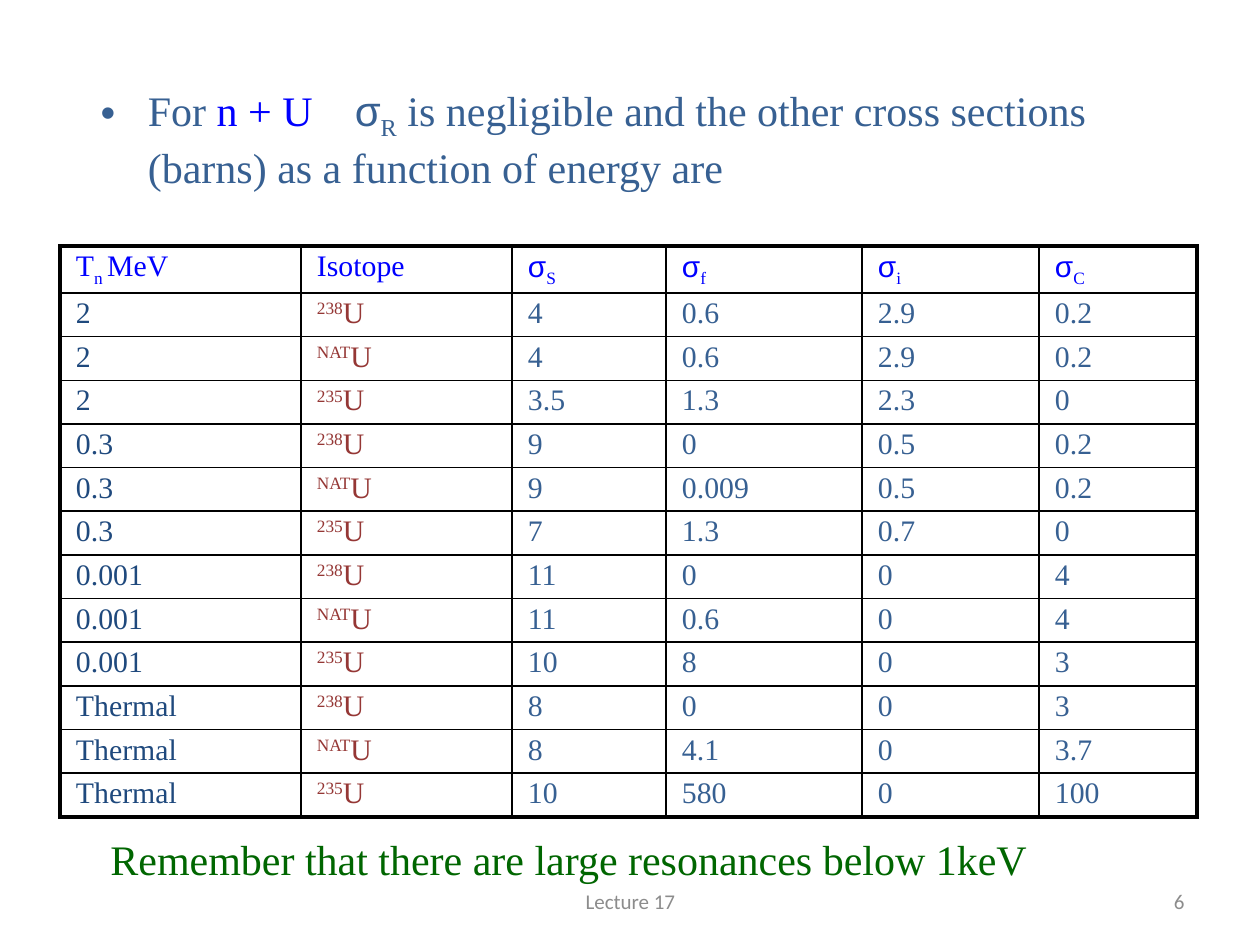
from dataclasses import dataclass
from itertools import product

from lxml import etree
from pptx import Presentation
from pptx.dml.color import RGBColor
from pptx.enum.text import MSO_ANCHOR, PP_ALIGN
from pptx.oxml.ns import qn
from pptx.util import Emu, Pt

LEFT, CENTER, RIGHT = PP_ALIGN.LEFT, PP_ALIGN.CENTER, PP_ALIGN.RIGHT
TOP, MIDDLE = MSO_ANCHOR.TOP, MSO_ANCHOR.MIDDLE
EMU_PER_PX = 914400 / 126


@dataclass(frozen=True)
class Theme:
    serif: str = "Times New Roman"
    greek: str = "Arial"
    sans: str = "Calibri"
    body: str = "376092"
    accent: str = "0000FF"
    energy: str = "1F497D"
    isotope: str = "953735"
    reminder: str = "006600"
    muted: str = "8C8C8C"
    paper: str = "FFFFFF"
    rule: str = "000000"
    statement_size: int = 24
    table_size: int = 17
    footer_size: int = 12
    subscript: int = -25
    superscript: int = 30
    outer_rule: float = 2.25
    inner_rule: float = 1


THEME = Theme()

COLUMN_WIDTHS = [241, 211, 154, 196, 177, 158]
HEADER_HEIGHT = 47
ENERGIES = ["2", "0.3", "0.001", "Thermal"]
ISOTOPES = ["238", "NAT", "235"]
CROSS_SECTIONS = [
    ["4", "0.6", "2.9", "0.2"],
    ["4", "0.6", "2.9", "0.2"],
    ["3.5", "1.3", "2.3", "0"],
    ["9", "0", "0.5", "0.2"],
    ["9", "0.009", "0.5", "0.2"],
    ["7", "1.3", "0.7", "0"],
    ["11", "0", "0", "4"],
    ["11", "0.6", "0", "4"],
    ["10", "8", "0", "3"],
    ["8", "0", "0", "3"],
    ["8", "4.1", "0", "3.7"],
    ["10", "580", "0", "100"],
]


def px(length):
    return Emu(round(length * EMU_PER_PX))


def write(paragraph, text, *, size, color, font=THEME.serif, baseline=0, tracking=0):
    run = paragraph.add_run()
    run.text = text
    run.font.size = Pt(size)
    run.font.name = font
    run.font.color.rgb = RGBColor.from_string(color)
    if baseline:
        run.font._element.set("baseline", str(baseline * 1000))
    if tracking:
        run.font._element.set("spc", str(tracking * 100))


def write_sigma(paragraph, index, *, size, color):
    write(paragraph, "σ", size=size, color=color, font=THEME.greek)
    write(paragraph, index, size=size, color=color, baseline=THEME.subscript)


def place_statement(slide, box):
    statement = slide.placeholders[1]
    statement.left, statement.top, statement.width, statement.height = map(px, box)
    statement.fill.solid()
    statement.fill.fore_color.rgb = RGBColor.from_string(THEME.paper)
    paragraph = statement.text_frame.paragraphs[0]
    size = THEME.statement_size
    write(paragraph, "For ", size=size, color=THEME.body)
    write(paragraph, "n + U", size=size, color=THEME.accent)
    write(paragraph, " ", size=size, color=THEME.accent, tracking=18)
    write_sigma(paragraph, "R", size=size, color=THEME.body)
    write(paragraph, " is negligible and the other cross sections (barns) as a function of energy are",
          size=size, color=THEME.body)


def rule_cell(cell, widths):
    properties = cell._tc.get_or_add_tcPr()
    for position, (side, width) in enumerate(widths.items()):
        line = etree.Element(qn(f"a:ln{side}"), w=str(Pt(width)))
        fill = etree.SubElement(line, qn("a:solidFill"))
        etree.SubElement(fill, qn("a:srgbClr"), val=THEME.rule)
        properties.insert(position, line)


def fill_header(paragraph, column):
    style = {"size": THEME.table_size, "color": THEME.accent}
    if column == 0:
        write(paragraph, "T", **style)
        write(paragraph, "n ", baseline=THEME.subscript, **style)
        write(paragraph, "MeV", **style)
    elif column == 1:
        write(paragraph, "Isotope", **style)
    else:
        write_sigma(paragraph, "SfiC"[column - 2], **style)


def fill_entry(paragraph, column, text):
    size = THEME.table_size
    if column == 1:
        write(paragraph, text, size=size, color=THEME.isotope, baseline=THEME.superscript)
        write(paragraph, "U", size=size, color=THEME.isotope)
    else:
        write(paragraph, text, size=size, color=THEME.body if column else THEME.energy)


def place_cross_sections(slide, box):
    entries = [[energy, isotope, *values] for (energy, isotope), values
               in zip(product(ENERGIES, ISOTOPES), CROSS_SECTIONS)]
    last_row, last_column = len(entries), len(COLUMN_WIDTHS) - 1
    table = slide.shapes.add_table(last_row + 1, last_column + 1, *map(px, box)).table
    table.first_row = table.horz_banding = False
    for column, width in zip(table.columns, COLUMN_WIDTHS):
        column.width = px(width)
    entry_height = (box[3] - HEADER_HEIGHT) / last_row
    for row_index, row in enumerate(table.rows):
        row.height = px(entry_height if row_index else HEADER_HEIGHT)
        for column_index, cell in enumerate(row.cells):
            cell.margin_left = cell.margin_right = px(16)
            cell.margin_top = cell.margin_bottom = px(4)
            cell.fill.background()
            edges = {"L": column_index == 0, "R": column_index == last_column,
                     "T": row_index == 0, "B": row_index == last_row}
            rule_cell(cell, {side: THEME.outer_rule if outer else THEME.inner_rule
                             for side, outer in edges.items()})
            paragraph = cell.text_frame.paragraphs[0]
            if row_index:
                fill_entry(paragraph, column_index, entries[row_index - 1][column_index])
            else:
                fill_header(paragraph, column_index)


def place_line(slide, box, text, *, align=LEFT, anchor=TOP, **style):
    frame = slide.shapes.add_textbox(*map(px, box)).text_frame
    frame.word_wrap = True
    frame.vertical_anchor = anchor
    frame.paragraphs[0].alignment = align
    write(frame.paragraphs[0], text, **style)


def place_footer(slide, box):
    left, top, width, height = box
    style = {"anchor": MIDDLE, "size": THEME.footer_size, "color": THEME.muted, "font": THEME.sans}
    number_width = 294
    place_line(slide, (left + width - number_width, top, number_width, height), "6", align=RIGHT, **style)
    place_line(slide, (left, top, 399, height), "Lecture 17", align=CENTER, **style)


def main():
    presentation = Presentation()
    presentation.slide_width, presentation.slide_height = px(1260), px(945)
    slide = presentation.slides.add_slide(presentation.slide_layouts[1])
    title = slide.shapes.title._element
    title.getparent().remove(title)
    place_statement(slide, (88, 78, 1045, 116))
    place_cross_sections(slide, (60, 246, sum(COLUMN_WIDTHS), 571))
    place_line(slide, (98, 827, 950, 63), "Remember that there are large resonances below 1keV",
               size=THEME.statement_size, color=THEME.reminder)
    place_footer(slide, (431, 876, 766, 50))
    presentation.save("out.pptx")


if __name__ == "__main__":
    main()
